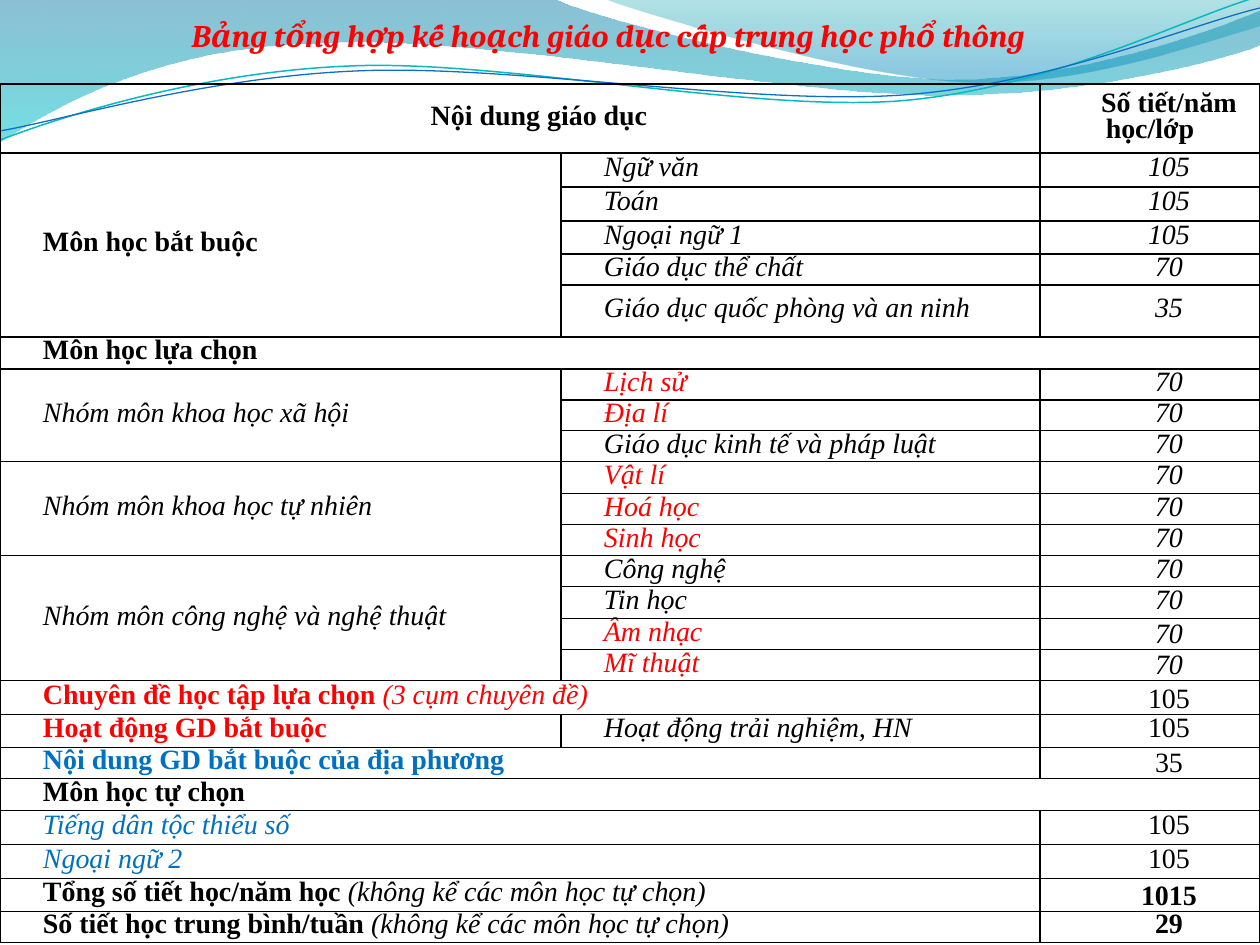
import itertools

import pptx
import pptx.dml.color
import pptx.enum.text
import pptx.oxml
import pptx.oxml.ns
import pptx.util
from lxml import etree

PX = 914400 / 126
BLACK, RED, BLUE = "000000", "FF0000", "0070C0"
ALIGN = pptx.enum.text.PP_ALIGN
ANCHOR = pptx.enum.text.MSO_ANCHOR
qn = pptx.oxml.ns.qn

# Each outline is a start point, then lines (x, y) and curves (two controls, end).
BACK_WAVE = [(0, 0), (554, -1), (600, 21, 837, 79, 955, 79),
             (1075, 79, 1207, 33, 1260, 11), (1261, 45),
             (1239, 55, 1096, 96, 940, 95), (784, 95, 481, 35, 324, 43),
             (163, 45, 58, 105, -1, 142)]
FRONT_WAVE = [(604, -1), (641, 14, 859, 78, 969, 82),
              (1079, 87, 1211, 40, 1260, 26), (1260, 0)]
TEAL_LINE = [(0, 140), (60, 117, 199, 72, 349, 66),
             (498, 59, 747, 112, 898, 101), (1050, 89, 1182, 19, 1257, -3)]
BLUE_LINE = [(0, 131), (59, 121, 207, 77, 357, 71),
             (508, 64, 751, 106, 903, 95), (1053, 84, 1186, 26, 1260, 8)]

COLUMNS = [561, 479, 220]
ROW_EDGES = [84, 153, 187, 221, 254, 285, 337, 369, 400, 431, 462, 494, 525,
             556, 587, 619, 650, 681, 715, 748, 779, 811, 845, 879, 912, 943]
LOW_HOURS_ROWS = {15, 16, 17, 19, 23}
NOTE = ("(không kể các môn học tự chọn)", "i", BLACK)


def px(n):
    return pptx.util.Emu(round(n * PX))


def color(hex_string):
    return pptx.dml.color.RGBColor.from_string(hex_string)


def bold(text, hue=BLACK):
    return [(text, "b", hue)]


def italic(text, hue=BLACK):
    return [(text, "i", hue)]


def plain(text):
    return [(text, "", BLACK)]


def group(name, hours, *subjects):
    """Rows of one subject group; the name spans all of them."""
    return [[name if i == 0 else None, subject, italic(hours[i])]
            for i, subject in enumerate(subjects)]


# None in the first column joins the cell above, elsewhere the cell to the left.
ROWS = [
    [bold("Nội dung giáo dục"), None, bold("Số tiết/năm học/lớp")],
    *group(bold("Môn học bắt buộc"), ["105", "105", "105", "70", "35"],
           italic("Ngữ văn"), italic("Toán"), italic("Ngoại ngữ 1"),
           italic("Giáo dục thể chất"), italic("Giáo dục quốc phòng và an ninh")),
    [bold("Môn học lựa chọn"), None, None],
    *group(italic("Nhóm môn khoa học xã hội"), ["70"] * 3,
           italic("Lịch sử", RED), italic("Địa lí", RED),
           italic("Giáo dục kinh tế và pháp luật")),
    *group(italic("Nhóm môn khoa học tự nhiên"), ["70"] * 3,
           italic("Vật lí", RED), italic("Hoá học", RED), italic("Sinh học", RED)),
    *group(italic("Nhóm môn công nghệ và nghệ thuật"), ["70"] * 4,
           italic("Công nghệ"), italic("Tin học"),
           italic("Âm nhạc", RED), italic("Mĩ thuật", RED)),
    [bold("Chuyên đề học tập lựa chọn ", RED) + italic("(3 cụm chuyên đề)", RED),
     None, plain("105")],
    [bold("Hoạt động GD bắt buộc", RED), italic("Hoạt động trải nghiệm, HN"),
     plain("105")],
    [bold("Nội dung GD bắt buộc của địa phương", BLUE), None, plain("35")],
    [bold("Môn học tự chọn"), None, None],
    [italic("Tiếng dân tộc thiểu số", BLUE), None, plain("105")],
    [italic("Ngoại ngữ 2", BLUE), None, plain("105")],
    [bold("Tổng số tiết học/năm học ") + [NOTE], None, bold("1015")],
    [bold("Số tiết học trung bình/tuần ") + [NOTE], None, bold("29")],
]


def add_outline(s, outline, close):
    """Builds a freeform, then turns each curve's three points into a Bézier."""
    start, *segments = outline
    points = [pt for seg in segments for pt in zip(seg[::2], seg[1::2])]
    builder = s.shapes.build_freeform(*start, scale=PX)
    builder.add_line_segments(points, close=close)
    sp = builder.convert_to_shape()
    sp.shadow.inherit = False
    geometry = next(sp._element.iter(qn("a:path")))
    lines = iter(geometry.findall(qn("a:lnTo")))
    for seg in segments:
        steps = list(itertools.islice(lines, len(seg) // 2))
        if len(steps) == 3:
            curve = etree.Element(qn("a:cubicBezTo"))
            steps[0].addprevious(curve)
            for step in steps:
                curve.append(step[0])
                geometry.remove(step)
    return sp


def add_wave(s, outline, stops):
    """Stops are (position, colour, opacity percent), from top to bottom."""
    sp = add_outline(s, outline, True)
    sp.line.fill.background()
    sp.fill.gradient()
    sp.fill.gradient_angle = 270
    for stop, (position, hue, opacity) in zip(sp.fill.gradient_stops, stops):
        stop.position = position
        stop.color.rgb = color(hue)
    for rgb, (_, _, opacity) in zip(sp._element.spPr.iter(qn("a:srgbClr")), stops):
        etree.SubElement(rgb, qn("a:alpha")).set("val", str(opacity * 1000))


def add_wave_line(s, outline, hue, width):
    sp = add_outline(s, outline, False)
    sp.fill.background()
    sp.line.color.rgb = color(hue)
    sp.line.width = pptx.util.Pt(width)


def format_run(r, font, size, style, hue):
    r.font.name = font
    r.font.size = pptx.util.Pt(size)
    r.font.bold = "b" in style
    r.font.italic = "i" in style
    r.font.color.rgb = color(hue)


def set_borders(cell):
    tcPr = cell._tc.get_or_add_tcPr()
    for i, side in enumerate("LRTB"):
        tcPr.insert(i, pptx.oxml.parse_xml(
            f'<a:ln{side} {pptx.oxml.ns.nsdecls("a")} w="12700"><a:solidFill>'
            f'<a:srgbClr val="{BLACK}"/></a:solidFill></a:ln{side}>'))


def fill_cell(cell, runs, align, anchor):
    cell.vertical_anchor = anchor
    cell.margin_left = cell.margin_right = px(5)
    cell.margin_top = cell.margin_bottom = 0
    p = cell.text_frame.paragraphs[0]
    p.alignment = align
    p.line_spacing = pptx.util.Pt(15)
    p.space_before = p.space_after = pptx.util.Pt(1)
    pPr = p._p.get_or_add_pPr()
    pPr.set("marL", "0")
    pPr.set("indent", str(px(38)))
    for text, style, hue in runs:
        r = p.add_run()
        r.text = text
        format_run(r, "Times New Roman", 16, style, hue)


def add_plan_table(s):
    frame = s.shapes.add_table(len(ROWS), len(COLUMNS), 0, px(ROW_EDGES[0]),
                               px(sum(COLUMNS)), px(ROW_EDGES[-1] - ROW_EDGES[0]))
    table = frame.table
    table.first_row = table.horz_banding = False
    for column, width in zip(table.columns, COLUMNS):
        column.width = px(width)
    for row, top, bottom in zip(table.rows, ROW_EDGES, ROW_EDGES[1:]):
        row.height = px(bottom - top)
    spans = {}
    for i, row in enumerate(ROWS):
        for j, runs in enumerate(row):
            cell = table.cell(i, j)
            cell.fill.background()
            set_borders(cell)
            if runs is None:
                origin = spans[i - 1, j] if j == 0 else spans[i, j - 1]
                spans[i, j] = origin
                continue
            spans[i, j] = (i, j)
            low = j == 2 and i in LOW_HOURS_ROWS
            fill_cell(cell, runs, ALIGN.CENTER if i == 0 or j == 2 else ALIGN.JUSTIFY,
                      ANCHOR.BOTTOM if low else ANCHOR.MIDDLE)
    last = {origin: place for place, origin in spans.items()}
    for origin, place in last.items():
        if origin != place:
            table.cell(*origin).merge(table.cell(*place))


def set_title(s, text):
    sp = s.shapes.title
    sp.left, sp.top, sp.width, sp.height = px(0), px(10), px(1260), px(50)
    s.shapes._spTree.append(sp._element)
    tf = sp.text_frame
    tf.text = text
    tf.word_wrap = True
    tf.auto_size = pptx.enum.text.MSO_AUTO_SIZE.SHAPE_TO_FIT_TEXT
    tf.vertical_anchor = ANCHOR.TOP
    tf.margin_right = px(56)
    p = tf.paragraphs[0]
    p.alignment = ALIGN.CENTER
    p.space_before = pptx.util.Pt(3.8)
    format_run(p.runs[0], "Cambria", 18, "bi", RED)


def main():
    prs = pptx.Presentation()
    prs.slide_width, prs.slide_height = px(1260), px(945)
    s = prs.slides.add_slide(prs.slide_layouts[5])
    add_wave(s, BACK_WAVE, [(0, "0074A1", 45), (1, "00C6CF", 55)])
    add_wave(s, FRONT_WAVE, [(0, "00A1A9", 30), (0.8, "008BBF", 45)])
    add_wave_line(s, TEAL_LINE, "0AB8BF", 0.85)
    add_wave_line(s, BLUE_LINE, "0F6FC6", 0.75)
    add_plan_table(s)
    set_title(s, "Bảng tổng hợp kế hoạch giáo dục cấp trung học phổ thông")
    prs.save("out.pptx")


if __name__ == "__main__":
    main()
